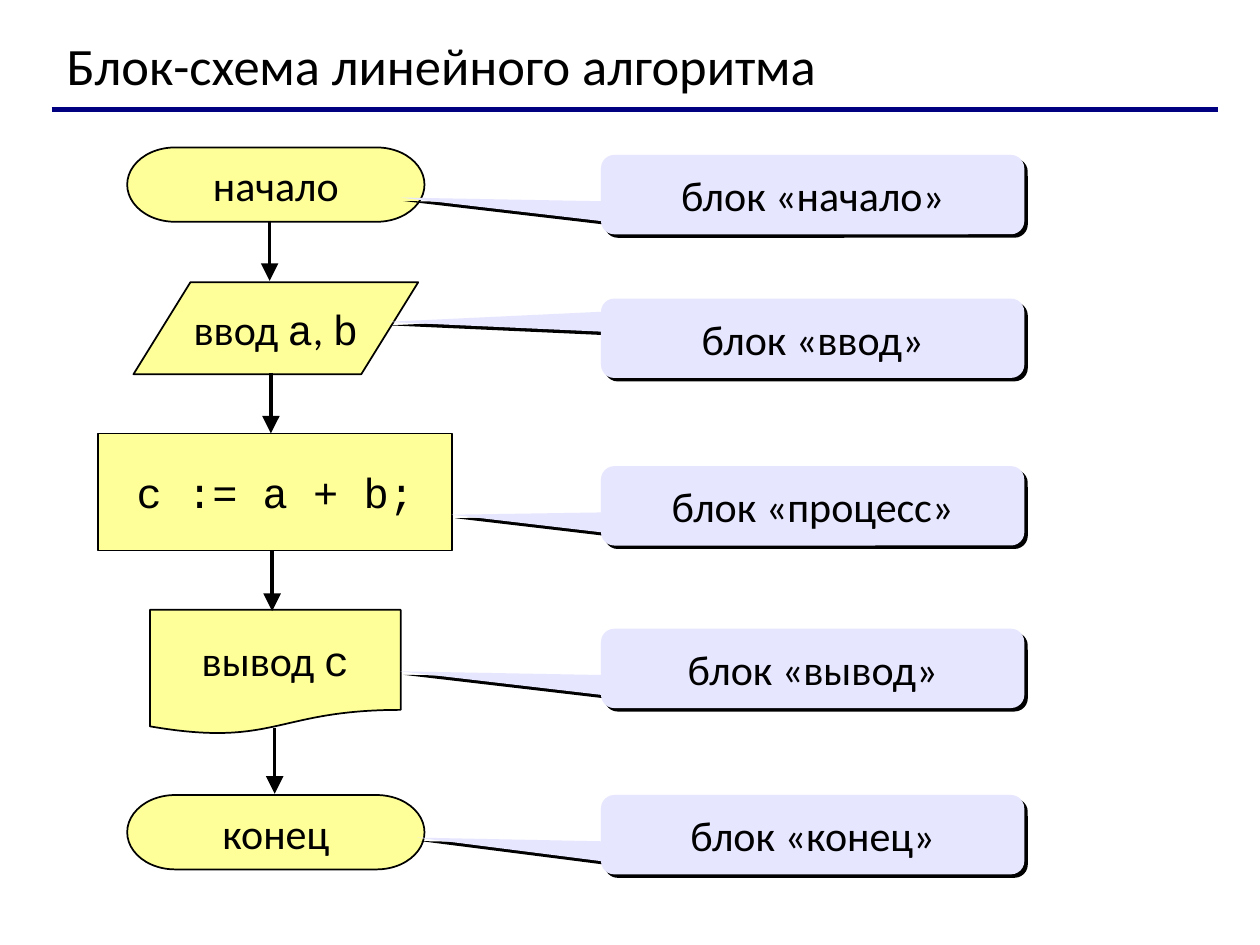
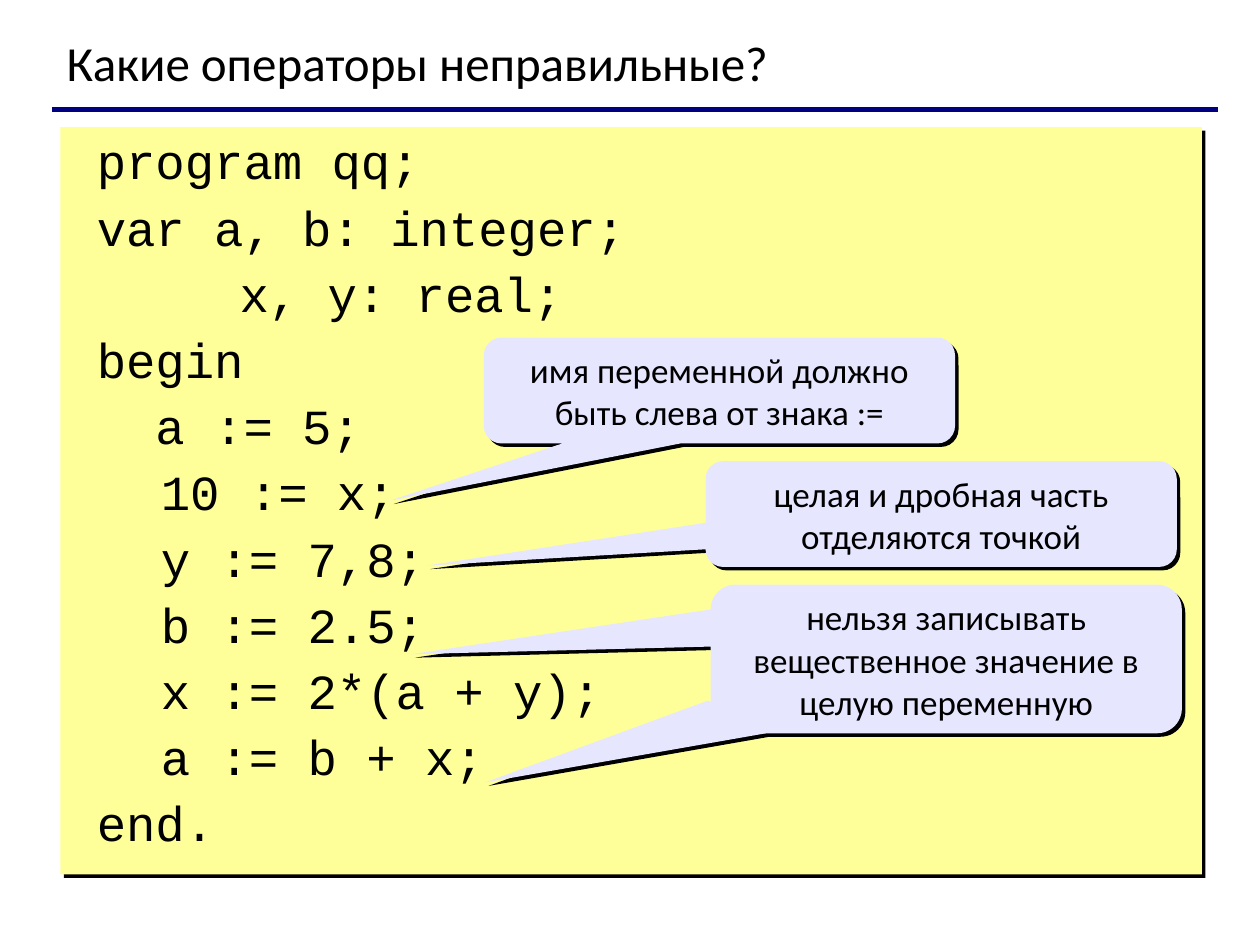
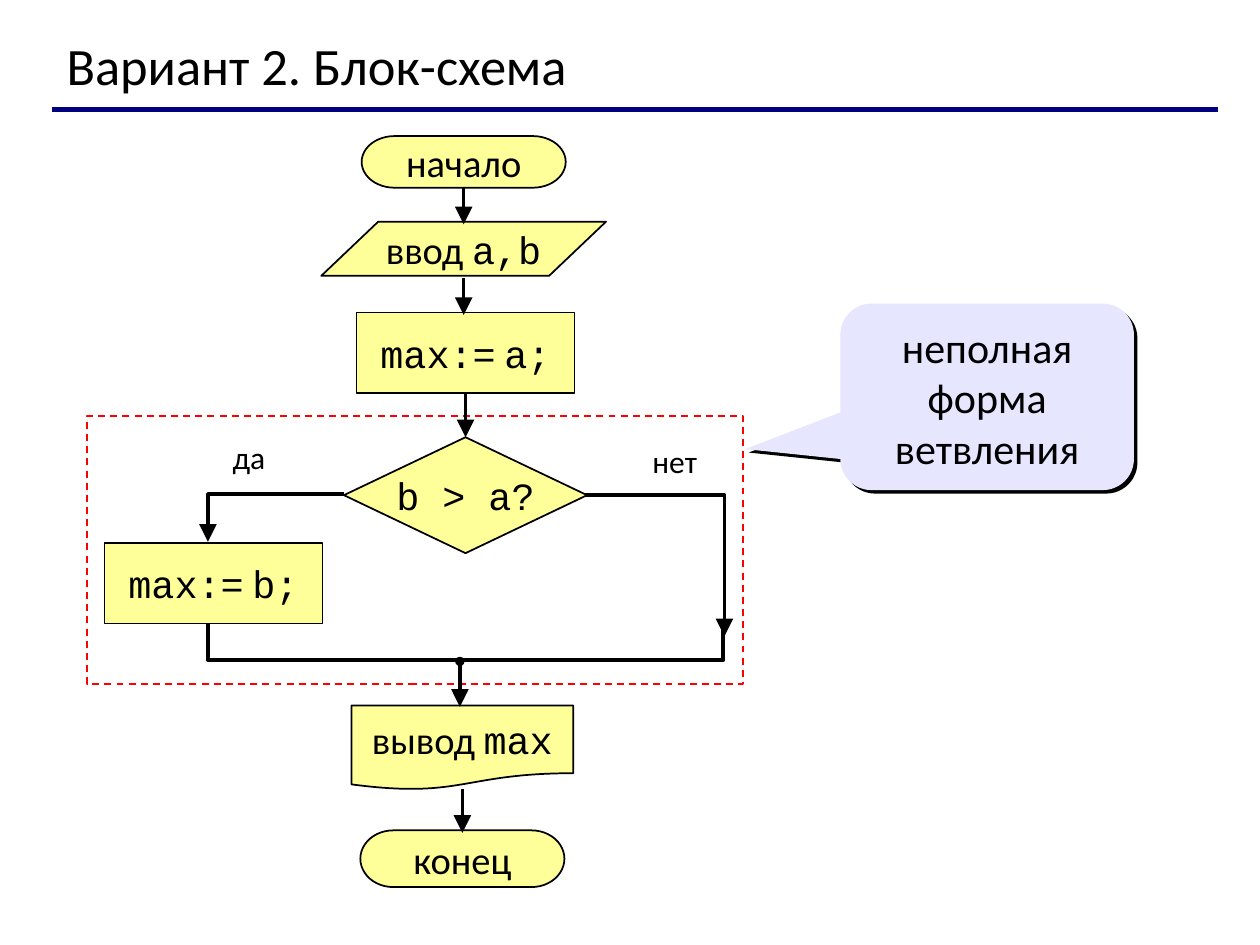
import pptx
import pptx.dml.color
import pptx.enum.dml
import pptx.enum.shapes
import pptx.enum.text
import pptx.oxml
import pptx.oxml.ns
import pptx.util
from pptx.util import Inches

COLORS = {"ink": "000000", "rule": "000080", "block": "FFFF99",
          "callout": "E6E6FF", "frame": "FF0000"}
BODY, CODE = "Calibri", "Courier New"
SHAPES = pptx.enum.shapes.MSO_SHAPE
ALIGN = pptx.enum.text.PP_ALIGN
START_END = SHAPES.FLOWCHART_TERMINATOR
INPUT = SHAPES.FLOWCHART_DATA
PROCESS = SHAPES.RECTANGLE
DECISION = SHAPES.FLOWCHART_DECISION
OUTPUT = SHAPES.FLOWCHART_DOCUMENT

# Blocks: kind, (left, top, width, height), [(text, font), ...]
LINEAR_BLOCKS = [
    (START_END, (1.01, 1.17, 2.36, 0.59), [("начало", BODY)]),
    (INPUT, (1.06, 2.24, 2.26, 0.73),
     [("ввод ", BODY), ("a", CODE), (", ", BODY), ("b", CODE)]),
    (PROCESS, (0.78, 3.44, 2.81, 0.93), [("c := a + b;", CODE)]),
    (OUTPUT, (1.19, 4.84, 1.99, 0.99), [("вывод ", BODY), ("c", CODE)]),
    (START_END, (1.01, 6.31, 2.36, 0.59), [("конец", BODY)]),
]
# Vertical arrows: x, top, bottom
LINEAR_ARROWS = [(2.14, 1.75, 2.23), (2.15, 2.96, 3.44),
                 (2.16, 4.37, 4.85), (2.18, 5.78, 6.3)]
# Block names: text, top, pointer offset
LINEAR_CALLOUTS = [
    ("блок «начало»", 1.23, (-0.975, 0.037)),
    ("блок «ввод»", 2.37, (-1.007, -0.206)),
    ("блок «процесс»", 3.7, (-0.853, 0.112)),
    ("блок «вывод»", 4.99, (-0.975, 0.037)),
    ("блок «конец»", 6.31, (-0.935, 0.037)),
]

PROGRAM = [
    "\tprogram qq;",
    "\tvar a, b: integer;",
    "\t\t x, y: real;",
    "\tbegin",
    "\t  a := 5;",
    "   10 := x;",
    "   y := 7,8;",
    "   b := 2.5;",
    "   x := 2*(a + y);",
    "   a := b + x;",
    "\tend.",
]
ERROR_CALLOUTS = [
    ("имя переменной должно быть слева от знака :=",
     (3.84, 2.68, 3.74, 0.84), (-0.699, 1.04)),
    ("целая и дробная часть отделяются точкой",
     (5.6, 3.66, 3.74, 0.84), (-1.092, 0.488)),
    ("нельзя записывать вещественное значение в целую переменную",
     (5.64, 4.64, 3.74, 1.18), (-1.135, -0.032)),
]
SECOND_POINTER = [(3.85, 6.21), (5.62, 5.56), (6.08, 5.82)]

BRANCH_BLOCKS = {
    "start": (START_END, (2.87, 1.08, 1.62, 0.41), [("начало", BODY)]),
    "assign a": (PROCESS, (2.83, 2.48, 1.73, 0.64),
                 [("max:=", CODE), (" ", BODY), ("a;", CODE)]),
    "input": (INPUT, (2.55, 1.76, 2.26, 0.43), [("ввод ", BODY), ("a,b", CODE)]),
    "output": (OUTPUT, (2.79, 5.6, 1.76, 0.67), [("вывод ", BODY), ("max", CODE)]),
    "assign b": (PROCESS, (0.83, 4.31, 1.73, 0.64),
                 [("max:=", CODE), (" ", BODY), ("b;", CODE)]),
    "end": (START_END, (2.86, 6.59, 1.62, 0.45), [("конец", BODY)]),
    "decision": (DECISION, (2.73, 3.47, 1.93, 0.92), [("b > a?", CODE)]),
}
BRANCH_ARROWS = [(3.68, 1.49, 1.78), (3.68, 2.21, 2.5),
                 (3.67, 6.26, 6.61), (3.65, 5.26, 5.61)]
# Bent lines: points, ends in an arrowhead
BRANCH_PATHS = [
    ([(2.73, 3.92), (1.65, 3.92), (1.65, 4.3)], True),
    ([(4.58, 3.93), (5.75, 3.93), (5.75, 5.05)], True),
    ([(1.65, 4.95), (1.65, 5.24), (5.74, 5.24), (5.74, 4.96)], False),
]
BRANCH_LABELS = [("да", (1.6, 3.43, 0.75, 0.4)), ("нет", (4.98, 3.46, 0.75, 0.4))]


def color(name):
    return pptx.dml.color.RGBColor.from_string(COLORS[name])


def set_line(line, name, width):
    line.color.rgb = color(name)
    line.width = pptx.util.Pt(width)


def add_effects(shape, content=""):
    """Give the shape its own effect list, empty unless content is given."""
    shape._element.spPr.append(pptx.oxml.parse_xml(
        f'<a:effectLst {pptx.oxml.ns.nsdecls("a")}>{content}</a:effectLst>'))


def add_hard_shadow(shape):
    add_effects(shape, '<a:outerShdw dist="35560" dir="2700000" algn="ctr" rotWithShape="0">'
                       f'<a:srgbClr val="{COLORS["ink"]}"/></a:outerShdw>')


def add_arrowhead(line):
    line._get_or_add_ln().append(pptx.oxml.parse_xml(
        f'<a:tailEnd {pptx.oxml.ns.nsdecls("a")} type="triangle" w="lg" len="lg"/>'))


def write(paragraph, runs, size, align=ALIGN.CENTER):
    paragraph.alignment = align
    font = paragraph.font
    font.size = pptx.util.Pt(size)
    font.color.rgb = color("ink")
    fonts = {name for _, name in runs}
    if len(fonts) == 1:
        font.name = fonts.pop()
    for text, name in runs:
        run = paragraph.add_run()
        run.text = text
        if not font.name:
            run.font.name = name


def add_filled(slide, kind, box, fill):
    shape = slide.shapes.add_shape(kind, *map(Inches, box))
    shape.fill.solid()
    shape.fill.fore_color.rgb = color(fill)
    shape.line.fill.background()
    return shape


def add_text(slide, text, box, size, align):
    frame = slide.shapes.add_textbox(*map(Inches, box)).text_frame
    frame.word_wrap = True
    write(frame.paragraphs[0], [(text, BODY)], size, align)


def add_block(slide, kind, box, runs, size):
    shape = add_filled(slide, kind, box, "block")
    shape.shadow.inherit = False
    set_line(shape.line, "ink", 1)
    shape.text_frame.word_wrap = False
    shape.text_frame.vertical_anchor = pptx.enum.text.MSO_ANCHOR.MIDDLE
    write(shape.text_frame.paragraphs[0], runs, size)
    return shape


def add_callout(slide, text, box, pointer, size):
    shape = add_filled(slide, SHAPES.ROUNDED_RECTANGULAR_CALLOUT, box, "callout")
    for index, value in enumerate((*pointer, 0.167)):
        shape.adjustments[index] = value
    add_hard_shadow(shape)
    shape.text_frame.word_wrap = True
    shape.text_frame.vertical_anchor = pptx.enum.text.MSO_ANCHOR.MIDDLE
    write(shape.text_frame.paragraphs[0], [(text, BODY)], size)


def add_line(slide, start, end, name, width):
    line = slide.shapes.add_connector(
        pptx.enum.shapes.MSO_CONNECTOR.STRAIGHT, *map(Inches, (*start, *end)))
    set_line(line.line, name, width)
    add_effects(line)
    return line


def add_down_arrow(slide, x, top, bottom):
    arrow = add_line(slide, (x, top), (x, bottom), "ink", 2)
    add_arrowhead(arrow.line)
    return arrow


def add_outline(slide, points, close):
    start, *others = [tuple(map(Inches, point)) for point in points]
    builder = slide.shapes.build_freeform(*start)
    builder.add_line_segments(others, close=close)
    return builder.convert_to_shape()


def add_titled_slide(presentation, title, size=30):
    slide = presentation.slides.add_slide(presentation.slide_layouts[6])
    add_line(slide, (0.41, 0.87), (9.67, 0.87), "rule", 3)
    add_text(slide, title, (0.43, 0.21, 8.9, 0.6), size, ALIGN.LEFT)
    return slide


def build_linear_flowchart(presentation):
    slide = add_titled_slide(presentation, "Блок-схема линейного алгоритма")
    for kind, box, runs in LINEAR_BLOCKS:
        add_block(slide, kind, box, runs, 24)
    for arrow in LINEAR_ARROWS:
        add_down_arrow(slide, *arrow)
    for text, top, pointer in LINEAR_CALLOUTS:
        add_callout(slide, text, (4.77, top, 3.36, 0.63), pointer, 24)


def build_wrong_operators(presentation):
    slide = add_titled_slide(presentation, "Какие операторы неправильные?", 28)
    panel = add_filled(slide, SHAPES.RECTANGLE, (0.48, 1.01, 9.06, 5.93), "block")
    add_hard_shadow(panel)
    frame = panel.text_frame
    frame.word_wrap = True
    frame.vertical_anchor = pptx.enum.text.MSO_ANCHOR.TOP
    frame.margin_top = Inches(0.03)
    for number, code in enumerate(PROGRAM):
        paragraph = frame.add_paragraph() if number else frame.paragraphs[0]
        properties = paragraph._p.get_or_add_pPr()
        properties.set("marL", str(Inches(0.19)))
        properties.set("indent", str(-Inches(0.19)))
        properties.set("defTabSz", str(Inches(1)))
        if number:
            paragraph.space_before = pptx.util.Pt(4.2)
        # A single space after two tabs is narrower than the code
        tabs, space, rest = code.partition("\t\t ")
        pieces = ["\t\t", " ", rest] if space else [code]
        write(paragraph, [(piece, CODE) for piece in pieces], 28, ALIGN.LEFT)
        if space:
            paragraph.runs[1].font.size = pptx.util.Pt(16)
    for text, box, pointer in ERROR_CALLOUTS:
        add_callout(slide, text, box, pointer, 20)
    pointer = add_outline(slide, SECOND_POINTER, close=True)
    pointer.fill.solid()
    pointer.fill.fore_color.rgb = color("callout")
    pointer.line.fill.background()
    add_hard_shadow(pointer)


def build_branch_flowchart(presentation):
    slide = add_titled_slide(presentation, "Вариант 2. Блок-схема")
    frame = slide.shapes.add_shape(
        SHAPES.RECTANGLE, *map(Inches, (0.69, 3.3, 5.21, 2.13)))
    frame.shadow.inherit = False
    frame.fill.background()
    set_line(frame.line, "frame", 1)
    frame.line.dash_style = pptx.enum.dml.MSO_LINE.DASH
    add_callout(slide, "неполная форма ветвления",
                (6.67, 2.41, 2.33, 1.48), (-0.824, 0.28), 24)

    for points, has_arrowhead in BRANCH_PATHS:
        bent_line = add_outline(slide, points, close=False)
        bent_line.shadow.inherit = False
        bent_line.fill.background()
        set_line(bent_line.line, "ink", 2)
        if has_arrowhead:
            add_arrowhead(bent_line.line)

    blocks = {name: add_block(slide, *block, 22)
              for name, block in BRANCH_BLOCKS.items()}
    for arrow in BRANCH_ARROWS:
        add_down_arrow(slide, *arrow)
    to_decision = add_down_arrow(slide, 3.7, 3.12, 3.47)
    to_decision.begin_connect(blocks["assign a"], 2)
    to_decision.end_connect(blocks["decision"], 0)

    junction = add_filled(slide, SHAPES.OVAL, (3.62, 5.22, 0.06, 0.06), "ink")
    junction.shadow.inherit = False
    set_line(junction.line, "ink", 1)
    for text, box in BRANCH_LABELS:
        add_text(slide, text, box, 18, ALIGN.CENTER)


def main():
    presentation = pptx.Presentation()
    presentation.slide_width = Inches(10)
    presentation.slide_height = Inches(7.5)
    build_linear_flowchart(presentation)
    build_wrong_operators(presentation)
    build_branch_flowchart(presentation)
    presentation.save("out.pptx")


if __name__ == "__main__":
    main()
